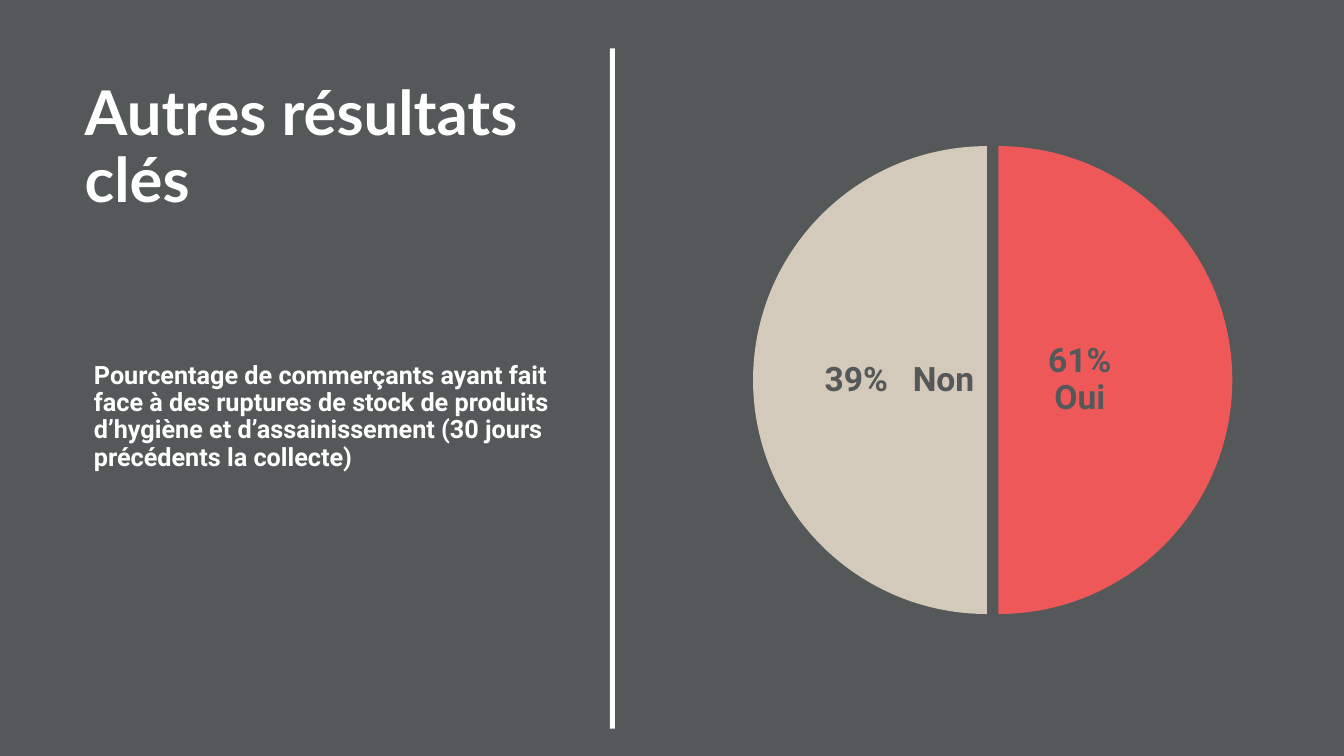
from lxml import etree
from pptx import Presentation
from pptx.dml.color import RGBColor
from pptx.enum.shapes import MSO_SHAPE
from pptx.enum.text import MSO_ANCHOR, PP_ALIGN
from pptx.oxml.ns import qn
from pptx.util import Inches, Pt

RECT, PIE = MSO_SHAPE.RECTANGLE, MSO_SHAPE.PIE
TOP, MIDDLE = MSO_ANCHOR.TOP, MSO_ANCHOR.MIDDLE
LEFT, CENTER = PP_ALIGN.LEFT, PP_ALIGN.CENTER

GREY = RGBColor(0x55, 0x58, 0x59)
WHITE = RGBColor(0xFF, 0xFF, 0xFF)
RED = RGBColor(0xEE, 0x58, 0x59)
BEIGE = RGBColor(0xD4, 0xCA, 0xBB)

COLS, ROWS = 160, 90
prs = Presentation()
prs.slide_width, prs.slide_height = Inches(13.33), Inches(7.5)
COL, ROW = prs.slide_width / COLS, prs.slide_height / ROWS
slide = prs.slides.add_slide(prs.slide_layouts[6])


def add_filled(kind, x, y, w, h, color):
    """Add a borderless shape placed in grid columns and rows."""
    sp = slide.shapes.add_shape(kind, int(x * COL), int(y * ROW), int(w * COL), int(h * ROW))
    sp.shadow.inherit = False
    sp.fill.solid()
    sp.fill.fore_color.rgb = color
    sp.line.fill.background()
    return sp


def add_text(x, y, w, h, lines, font, size, color, align=LEFT, anchor=TOP):
    """Add a one-paragraph text box placed in grid columns and rows."""
    sp = slide.shapes.add_textbox(int(x * COL), int(y * ROW), int(w * COL), int(h * ROW))
    tf = sp.text_frame
    tf.word_wrap = True
    tf.vertical_anchor = anchor
    p = tf.paragraphs[0]
    p.alignment = align
    p.line_spacing = 0.9
    for i, line in enumerate(lines):
        if i:
            p.add_line_break()
        r = p.add_run()
        r.text = line
        r.font.name, r.font.size, r.font.bold = font, Pt(size), True
        r.font.color.rgb = color
    return tf


# Background and divider
add_filled(RECT, 0, 0, COLS, ROWS, GREY)
add_filled(RECT, 72.6, 5.76, 0.6, 81, WHITE)

# Left column
add_text(8.9, 9.24, 59.5, 7.7, ["Autres résultats clés"], "Lato", 44, WHITE)
add_text(10, 42.6, 58.5, 11.5,
         ["Pourcentage de commerçants ayant fait face à des ruptures de stock de produits "
          "d’hygiène et d’assainissement (30 jours précédents la collecte)"],
         "Roboto", 18, WHITE)

# Two half discs, each with its label
PIE_TOP, PIE_SIZE = 17.4, 55.7
LABEL_W, LABEL_H = 0.35 * PIE_SIZE, 0.7 * PIE_SIZE
LABEL_TOP = PIE_TOP + (PIE_SIZE - LABEL_H) / 2
UP, DOWN = 162, 54
halves = [
    (91, (UP, DOWN), RED, 118.8, ["61%", "Oui"], CENTER),
    (89.65, (DOWN, UP), BEIGE, 97.8, ["39%\tNon"], LEFT),
]
for pie_left, angles, color, label_left, lines, align in halves:
    half = add_filled(PIE, pie_left, PIE_TOP, PIE_SIZE, PIE_SIZE, color)
    half.adjustments[0], half.adjustments[1] = angles
    tf = add_text(label_left, LABEL_TOP, LABEL_W, LABEL_H, lines, "Roboto", 24, GREY,
                  align, MIDDLE)
    tf.margin_left = tf.margin_right = tf.margin_top = tf.margin_bottom = Inches(0.03)
    if align == LEFT:
        tabs = etree.SubElement(tf.paragraphs[0]._p.get_or_add_pPr(), qn("a:tabLst"))
        etree.SubElement(tabs, qn("a:tab"), pos=str(int(10.5 * COL)), algn="l")

prs.save("out.pptx")
